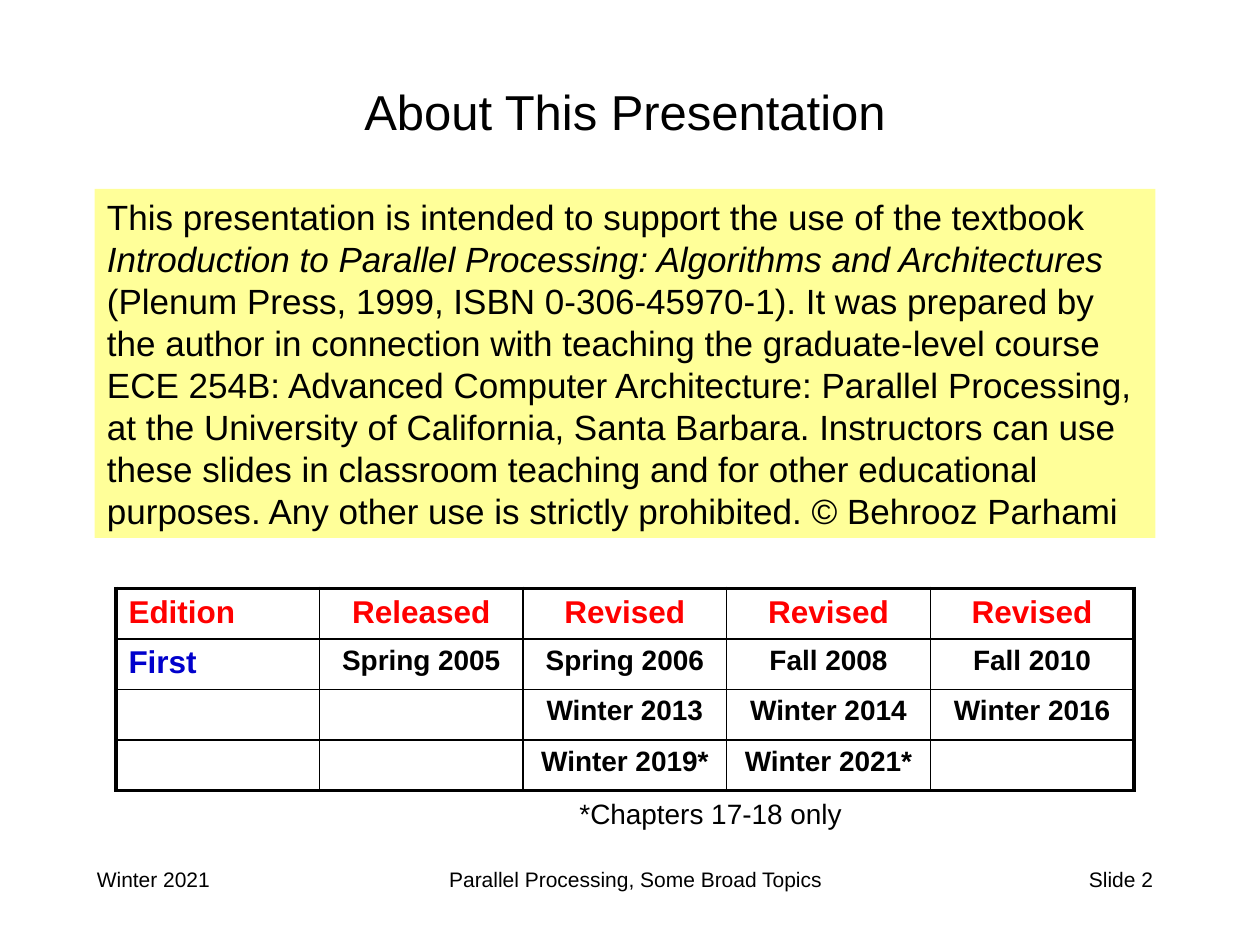
"""Build the About This Presentation slide."""
from lxml.etree import SubElement
from pptx import Presentation
from pptx.dml.color import RGBColor
from pptx.enum.shapes import MSO_SHAPE
from pptx.enum.text import MSO_ANCHOR, PP_ALIGN
from pptx.oxml.ns import qn
from pptx.util import Inches, Pt

BLACK = RGBColor(0x00, 0x00, 0x00)
RED = RGBColor(0xFF, 0x00, 0x00)
BLUE = RGBColor(0x00, 0x00, 0xCC)
YELLOW = RGBColor(0xFF, 0xFF, 0x99)

ABOUT = [
    [("This presentation is intended to support the use of the textbook ", False),
     ("Introduction to Parallel Processing: Algorithms and Architectures ", True),
     ("(Plenum Press, 1999, ISBN 0-306-45970-1). It was prepared by the author in "
      "connection with teaching the graduate-level course", False)],
    [("ECE 254B: Advanced Computer Architecture: Parallel Processing, at the "
      "University of California, Santa Barbara. Instructors can use these slides in "
      "classroom teaching and for other educational purposes. Any other use is "
      "strictly prohibited. © Behrooz Parhami", False)],
]
EDITIONS = [
    ["Edition", "Released", "Revised", "Revised", "Revised"],
    ["First", "Spring 2005", "Spring 2006", "Fall 2008", "Fall 2010"],
    ["", "", "Winter 2013", "Winter 2014", "Winter 2016"],
    ["", "", "Winter 2019*", "Winter 2021*", ""],
]


class SlideBuilder:
    """Hold the style and the current slide."""

    def __init__(self, deck, font="Arial"):
        self.font = font
        self.page = deck.slides.add_slide(deck.slide_layouts[5])

    def style(self, span, size, color=BLACK, bold=False, italic=False):
        span.font.name = self.font
        span.font.size = Pt(size)
        span.font.color.rgb = color
        span.font.bold = bold
        span.font.italic = italic

    def title(self, text, left, top, width, height):
        box = self.page.shapes.title
        box.left, box.top = Inches(left), Inches(top)
        box.width, box.height = Inches(width), Inches(height)
        box.text_frame.text = text
        box.text_frame.vertical_anchor = MSO_ANCHOR.MIDDLE
        para = box.text_frame.paragraphs[0]
        para.alignment = PP_ALIGN.CENTER
        self.style(para.runs[0], 28)

    def label(self, text, left, top, width, height, size, align=PP_ALIGN.LEFT, wrap=True):
        box = self.page.shapes.add_textbox(
            Inches(left), Inches(top), Inches(width), Inches(height))
        box.text_frame.word_wrap = wrap
        box.text_frame.text = text
        para = box.text_frame.paragraphs[0]
        para.alignment = align
        self.style(para.runs[0], size)

    def panel(self, paragraphs, left, top, width, height):
        box = self.page.shapes.add_shape(
            MSO_SHAPE.RECTANGLE, Inches(left), Inches(top), Inches(width), Inches(height))
        box.shadow.inherit = False
        box.fill.solid()
        box.fill.fore_color.rgb = YELLOW
        box.line.fill.background()
        frame = box.text_frame
        frame.word_wrap = True
        frame.vertical_anchor = MSO_ANCHOR.TOP
        for index, spans in enumerate(paragraphs):
            para = frame.add_paragraph() if index else frame.paragraphs[0]
            para.alignment = PP_ALIGN.LEFT
            para.line_spacing = Pt(24)
            for text, italic in spans:
                span = para.add_run()
                span.text = text
                self.style(span, 20, italic=italic)

    def border(self, cell, side, width):
        line = SubElement(cell._tc.get_or_add_tcPr(), qn(f"a:ln{side}"), w=str(Pt(width)))
        fill = SubElement(line, qn("a:solidFill"))
        SubElement(fill, qn("a:srgbClr"), val=str(BLACK))

    def table(self, rows, left, top, width, height):
        grid = self.page.shapes.add_table(
            len(rows), len(rows[0]), Inches(left), Inches(top),
            Inches(width), Inches(height)).table
        grid.first_row = grid.horz_banding = False
        last_row, last_column = len(rows) - 1, len(rows[0]) - 1
        for row, texts in enumerate(rows):
            for column, text in enumerate(texts):
                cell = grid.cell(row, column)
                outer = {"L": column == 0, "R": column == last_column,
                         "T": row == 0, "B": row == last_row}
                for side, is_outer in outer.items():
                    self.border(cell, side, 2.25 if is_outer else 1)
                cell.fill.background()
                cell.text_frame.text = text
                para = cell.text_frame.paragraphs[0]
                para.alignment = PP_ALIGN.CENTER if column else PP_ALIGN.LEFT
                heading = row == 0 or column == 0
                color = RED if row == 0 else BLACK if column else BLUE
                for span in para.runs:
                    self.style(span, 18 if heading else 16, color, bold=True)


def main():
    deck = Presentation()
    deck.slide_width, deck.slide_height = Inches(10), Inches(7.5)
    builder = SlideBuilder(deck)
    builder.label("Winter 2021", 0.67, 6.83, 2.08, 0.5, 12)
    builder.label("Parallel Processing, Some Broad Topics", 2.42, 6.83, 5.25, 0.5, 12,
                  PP_ALIGN.CENTER)
    builder.label("Slide 2", 7.17, 6.83, 2.08, 0.5, 12, PP_ALIGN.RIGHT)
    builder.title("About This Presentation", 0.42, 0.42, 9.08, 0.92)
    builder.panel(ABOUT, 0.75, 1.5, 8.42, 2.77)
    builder.table(EDITIONS, 0.92, 4.67, 8.08, 1.6)
    builder.label("*Chapters 17-18 only", 4.5, 6.27, 2.31, 0.37, 16, wrap=False)
    deck.save("out.pptx")


if __name__ == "__main__":
    main()
